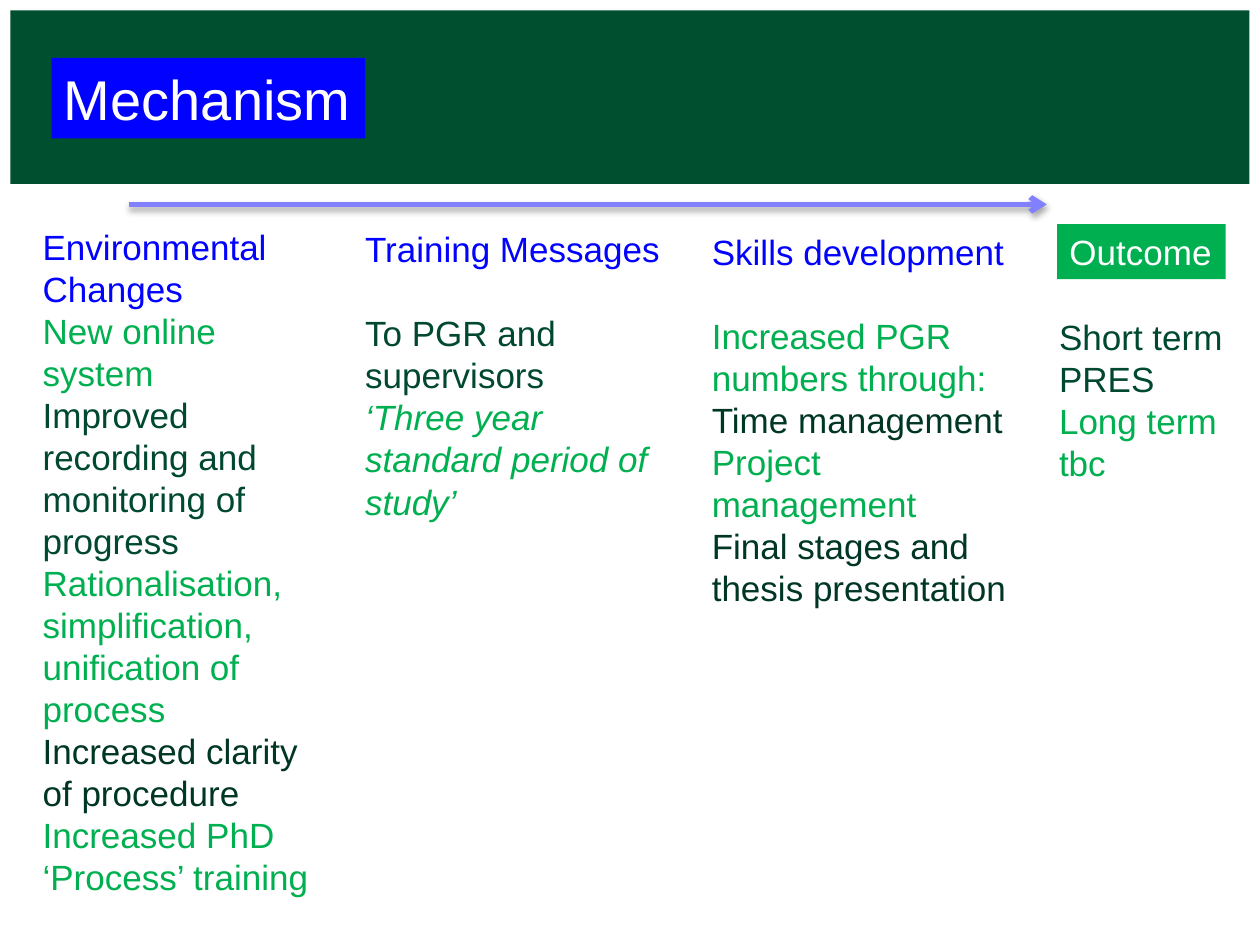
from dataclasses import dataclass

from lxml import etree
from pptx import Presentation
from pptx.dml.color import RGBColor
from pptx.enum.shapes import MSO_CONNECTOR, MSO_SHAPE
from pptx.enum.text import MSO_ANCHOR, PP_ALIGN
from pptx.oxml import parse_xml
from pptx.oxml.ns import qn
from pptx.util import Cm, Pt

RECT = MSO_SHAPE.RECTANGLE
LINE = MSO_CONNECTOR.STRAIGHT
TOP = MSO_ANCHOR.TOP
LEFT = PP_ALIGN.LEFT
FONT = "Arial"
LEAD = 1.2  # line pitch as a multiple of the text size
BODY = 20
HEX = {
    "band": "00502F", "title": "0101FF", "head": "0202FF", "green": "00B050",
    "dark": "004832", "deep": "003626", "white": "FFFFFF", "arrow": "8181FF",
}
SHADOW = """<a:effectLst xmlns:a="http://schemas.openxmlformats.org/drawingml/2006/main">
  <a:outerShdw blurRad="39370" dist="22860" dir="5400000" rotWithShape="0">
    <a:srgbClr val="000000"><a:alpha val="35000"/></a:srgbClr>
  </a:outerShdw>
</a:effectLst>"""


@dataclass
class Item:
    text: str
    hue: str
    slant: bool = False
    gap: bool = False


@dataclass
class Column:
    left: float
    top: float
    width: float
    height: float
    items: list[Item]


COLUMNS = [
    Column(0.61, 4.42, 6.1, 14.6, [
        Item("Environmental", "head"),
        Item("Changes", "head"),
        Item("New online system", "green"),
        Item("Improved recording and monitoring of progress", "dark"),
        Item("Rationalisation, simplification, unification of process", "green"),
        Item("Increased clarity of procedure", "deep"),
        Item("Increased PhD ‘Process’ training", "green"),
    ]),
    Column(7.11, 4.47, 6.6, 6.25, [
        Item("Training Messages", "head"),
        Item("To PGR and supervisors", "dark", gap=True),
        Item("‘Three year standard period of study’", "green", slant=True),
    ]),
    Column(14.1, 4.52, 6.6, 8.81, [
        Item("Skills development", "head"),
        Item("Increased PGR numbers through:", "green", gap=True),
        Item("Time management", "deep"),
        Item("Project management", "green"),
        Item("Final stages and thesis presentation", "deep"),
    ]),
    Column(21.1, 6.24, 3.81, 3.7, [
        Item("Short term PRES", "dark"),
        Item("Long term tbc", "green"),
    ]),
]


def write(para, text: str, *, hue: str, size: int = BODY,
          slant: bool = False, gap: bool = False) -> None:
    """Fill a paragraph; gap leaves one empty line above it."""
    para.alignment = LEFT
    para.line_spacing = Pt(size * LEAD)
    para.space_before = Pt(size * LEAD if gap else 0)
    run = para.add_run()
    run.text = text
    font = run.font
    font.name, font.size, font.italic = FONT, Pt(size), slant
    font.color.rgb = RGBColor.from_string(HEX[hue])


def add_block(slide, left: float, top: float, width: float, height: float, hue: str):
    block = slide.shapes.add_shape(RECT, Cm(left), Cm(top), Cm(width), Cm(height))
    block.shadow.inherit = False
    block.fill.solid()
    block.fill.fore_color.rgb = RGBColor.from_string(HEX[hue])
    block.line.fill.background()
    return block


def add_label(slide, text: str, *place: float, hue: str, size: int = BODY) -> None:
    frame = add_block(slide, *place, hue).text_frame
    frame.word_wrap = False
    frame.vertical_anchor = TOP
    write(frame.paragraphs[0], text, hue="white", size=size)


def add_column(slide, col: Column) -> None:
    box = slide.shapes.add_textbox(Cm(col.left), Cm(col.top), Cm(col.width), Cm(col.height))
    frame = box.text_frame
    frame.word_wrap = True
    for i, item in enumerate(col.items):
        para = frame.add_paragraph() if i else frame.paragraphs[0]
        write(para, item.text, hue=item.hue, slant=item.slant, gap=item.gap)


def add_arrow(slide, start: float, end: float, level: float) -> None:
    arrow = slide.shapes.add_connector(LINE, Cm(start), Cm(level), Cm(end), Cm(level))
    arrow.line.width = Pt(3)
    arrow.line.color.rgb = RGBColor.from_string(HEX["arrow"])
    etree.SubElement(arrow.line._get_or_add_ln(), qn("a:tailEnd"), type="arrow")
    arrow._element.spPr.append(parse_xml(SHADOW))


def main() -> None:
    deck = Presentation()
    deck.slide_width, deck.slide_height = Cm(25.4), Cm(19.05)
    slide = deck.slides.add_slide(deck.slide_layouts[6])
    add_block(slide, 0.21, 0.21, 24.98, 3.5, "band")
    add_label(slide, "Mechanism", 1.04, 1.17, 6.32, 1.62, hue="title", size=32)
    for col in COLUMNS:
        add_column(slide, col)
    add_label(slide, "Outcome", 21.31, 4.52, 3.4, 1.11, hue="green")
    add_arrow(slide, 2.6, 21.1, 4.12)
    deck.save("out.pptx")


if __name__ == "__main__":
    main()
